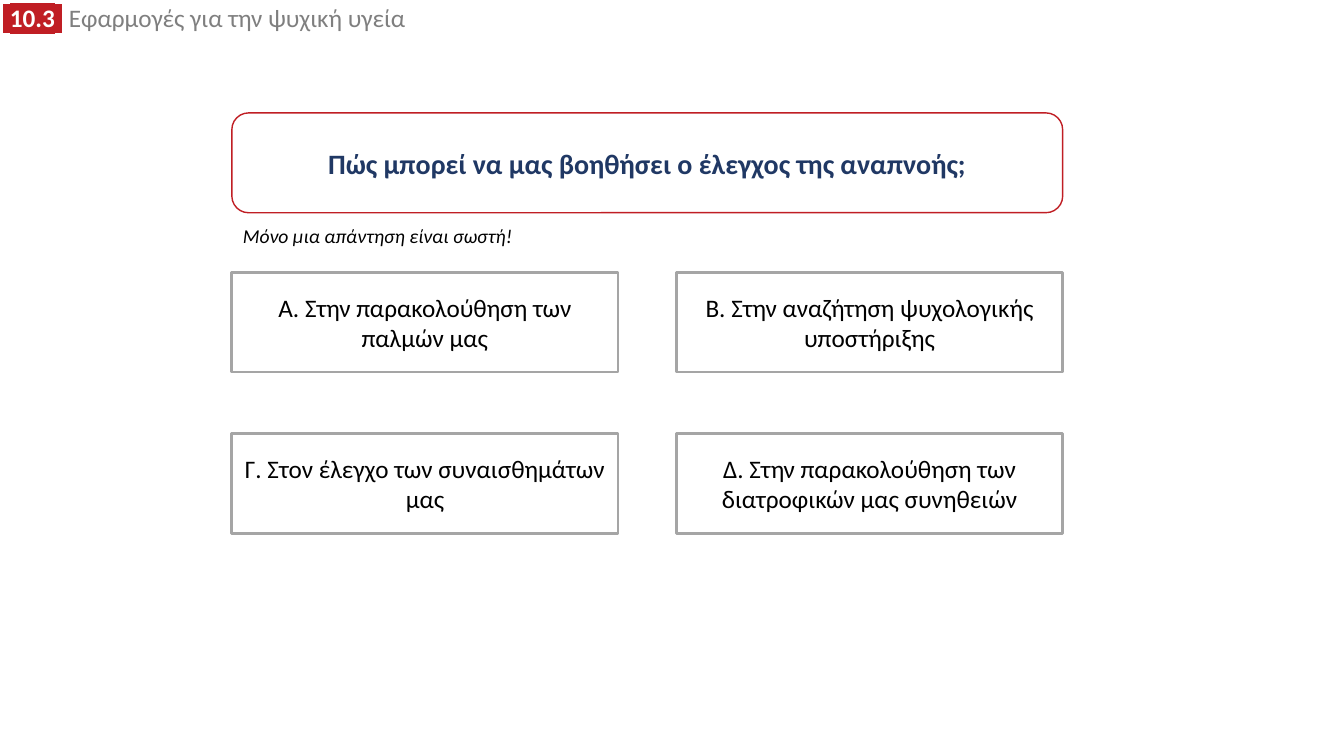
from lxml.etree import SubElement
from pptx import Presentation
from pptx.dml.color import RGBColor
from pptx.enum.shapes import MSO_SHAPE
from pptx.enum.text import MSO_ANCHOR, PP_ALIGN
from pptx.oxml.ns import qn
from pptx.util import Inches, Pt

COLORS = {"red": "C01E24", "navy": "203864", "gray": "7F7F7F",
          "edge": "A5A5A5", "white": "FFFFFF", "black": "000000"}
ANSWERS = ["Α. Στην παρακολούθηση των παλμών μας",
           "Β. Στην αναζήτηση ψυχολογικής υποστήριξης",
           "Γ. Στον έλεγχο των συναισθημάτων μας",
           "Δ. Στην παρακολούθηση των διατροφικών μας συνηθειών"]


def color(name):
    """Return the named colour."""
    return RGBColor.from_string(COLORS[name])


def write(para, text, size=18, ink="black", font="Calibri",
          bold=False, italic=False, mark=None):
    """Add a run of text in the given format."""
    run = para.add_run()
    run.text = text
    style = run.font
    style.size, style.bold, style.italic = Pt(size), bold, italic
    style.color.rgb = color(ink)
    if mark:
        props = run._r.get_or_add_rPr()
        light = SubElement(props, qn("a:highlight"))
        SubElement(light, qn("a:srgbClr"), val=COLORS[mark])
    style.name = font


def add_label(slide, left, top, width, height):
    """Add a wrapping text box and return its paragraph."""
    box = slide.shapes.add_textbox(
        Inches(left), Inches(top), Inches(width), Inches(height))
    box.text_frame.word_wrap = True
    return box.text_frame.paragraphs[0]


def add_card(slide, kind, left, top, width, text, edge, weight, **style):
    """Add an outlined card with centred text."""
    card = slide.shapes.add_shape(
        kind, Inches(left), Inches(top), Inches(width), Inches(0.99))
    card.shadow.inherit = False
    card.fill.solid()
    card.fill.fore_color.rgb = color("white")
    card.line.color.rgb = color(edge)
    card.line.width = Pt(weight)
    frame = card.text_frame
    frame.word_wrap = True
    frame.vertical_anchor = MSO_ANCHOR.MIDDLE
    para = frame.paragraphs[0]
    para.alignment = PP_ALIGN.CENTER
    write(para, text, **style)


def add_header(slide):
    """Add the section number and title."""
    para = add_label(slide, -0.07, 0.03, 4.35, 0.34)
    para.line_spacing = 0.8
    badge = {"ink": "white", "bold": True, "mark": "red"}
    write(para, " ", font="Arial", **badge)
    write(para, "10.3", **badge)
    write(para, " ", font="Arial", **badge)
    write(para, " ", font="Arial", ink="gray")
    write(para, "Εφαρμογές για την ψυχική υγεία", ink="gray")


def main():
    """Build the quiz slide."""
    deck = Presentation()
    deck.slide_width, deck.slide_height = Inches(13.33), Inches(7.5)
    slide = deck.slides.add_slide(deck.slide_layouts[6])
    add_header(slide)
    add_card(slide, MSO_SHAPE.ROUNDED_RECTANGLE, 2.3, 1.12, 8.24,
             "Πώς μπορεί να μας βοηθήσει ο έλεγχος της αναπνοής;",
             "red", 1, size=20, ink="navy", bold=True)
    hint = add_label(slide, 2.31, 2.17, 3.01, 0.34)
    write(hint, "Μόνο μια απάντηση είναι σωστή!", size=14, italic=True)
    for place, answer in enumerate(ANSWERS):
        row, col = divmod(place, 2)
        add_card(slide, MSO_SHAPE.RECTANGLE, 2.3 + 4.41 * col,
                 2.7 + 1.6 * row, 3.83, answer, "edge", 2)
    deck.save("out.pptx")


if __name__ == "__main__":
    main()
